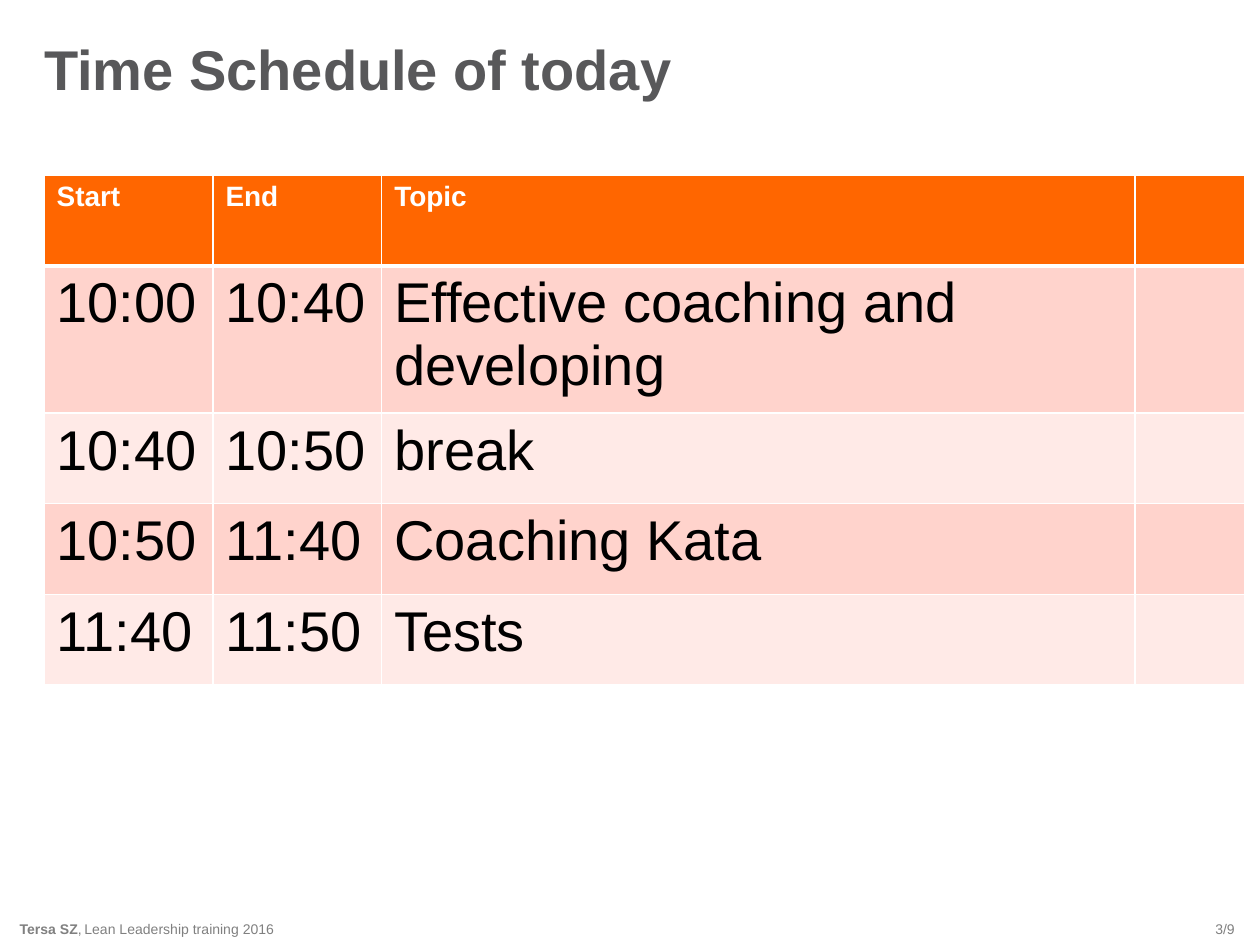
from lxml.etree import SubElement
from pptx import Presentation
from pptx.dml.color import RGBColor
from pptx.enum.text import MSO_ANCHOR, PP_ALIGN
from pptx.oxml.ns import qn
from pptx.util import Inches, Pt


def color(hex_value):
    return RGBColor.from_string(hex_value)


class SlideBuilder:
    font_name = "Arial"
    title_color = "58585A"
    footer_color = "808080"
    header_fill = "FF6600"
    band_fills = ("FFD3CC", "FFEAE7")
    border_color = "FFFFFF"

    def __init__(self, deck):
        self.slide = deck.slides.add_slide(deck.slide_layouts[6])

    def style_run(self, run, size, hex_value, bold=False):
        run.font.name = self.font_name
        run.font.size = Pt(size)
        run.font.bold = bold
        run.font.color.rgb = color(hex_value)

    def add_text(self, place, spans, size, hex_value, align=PP_ALIGN.LEFT,
                 left_inset=0, right_inset=0, line_spacing=None):
        """Place one line of text; spans are (text, bold) pairs."""
        box = self.slide.shapes.add_textbox(*[Inches(value) for value in place])
        frame = box.text_frame
        frame.word_wrap = True
        frame.vertical_anchor = MSO_ANCHOR.MIDDLE
        frame.margin_top = frame.margin_bottom = 0
        frame.margin_left = Inches(left_inset)
        frame.margin_right = Inches(right_inset)
        para = frame.paragraphs[0]
        para.alignment = align
        if line_spacing:
            para.line_spacing = Pt(line_spacing)
        for text, bold in spans:
            span = para.add_run()
            span.text = text
            self.style_run(span, size, hex_value, bold)

    def set_borders(self, cell, top, bottom):
        properties = cell._tc.get_or_add_tcPr()
        for side, width in (("L", 1), ("R", 1), ("T", top), ("B", bottom)):
            line = SubElement(properties, qn(f"a:ln{side}"), w=str(Pt(width)))
            fill = SubElement(line, qn("a:solidFill"))
            SubElement(fill, qn("a:srgbClr"), val=self.border_color)

    def add_schedule(self, left, top, widths, row_height, rows):
        table = self.slide.shapes.add_table(
            len(rows), len(widths), Inches(left), Inches(top),
            Inches(sum(widths)), Inches(row_height * len(rows))).table
        for column, width in zip(table.columns, widths):
            column.width = Inches(width)
        for row_index, texts in enumerate(rows):
            is_header = row_index == 0
            fill = self.header_fill if is_header else self.band_fills[(row_index - 1) % 2]
            table.rows[row_index].height = Inches(row_height)
            for column_index, text in enumerate(texts):
                cell = table.cell(row_index, column_index)
                # A thick rule separates the header from the body
                self.set_borders(cell, top=3 if row_index == 1 else 1,
                                 bottom=3 if is_header else 1)
                cell.fill.solid()
                cell.fill.fore_color.rgb = color(fill)
                cell.text_frame.text = text
                for run in cell.text_frame.paragraphs[0].runs:
                    if is_header:
                        self.style_run(run, 16, "FFFFFF", bold=True)
                    else:
                        self.style_run(run, 32, "000000")


def main():
    deck = Presentation()
    deck.slide_width, deck.slide_height = Inches(10), Inches(7.5)
    page = SlideBuilder(deck)

    # Footer
    gray = page.footer_color
    page.add_text((9.25, 7.25, 0.75, 0.25), [("3/9", False)], 8, gray,
                  PP_ALIGN.RIGHT, right_inset=0.2)
    page.add_text((0, 7.25, 0.67, 0.25), [("Tersa SZ", True), (",", False)], 8, gray,
                  PP_ALIGN.RIGHT, left_inset=0.04, right_inset=0.02)
    page.add_text((0.67, 7.25, 8.17, 0.25),
                  [("Lean Leadership training 2016", False)], 8, gray)

    # Title
    page.add_text((0.35, 0.3, 7.4, 0.79), [("Time Schedule of today", True)],
                  32, page.title_color, line_spacing=16)

    # Schedule
    page.add_schedule(0.35, 1.39, (1.34, 1.34, 5.98, 0.87), 0.72, [
        ("Start", "End", "Topic", ""),
        ("10:00", "10:40", "Effective coaching and developing", ""),
        ("10:40", "10:50", "break", ""),
        ("10:50", "11:40", "Coaching Kata", ""),
        ("11:40", "11:50", "Tests", ""),
    ])

    deck.save("out.pptx")


if __name__ == "__main__":
    main()
